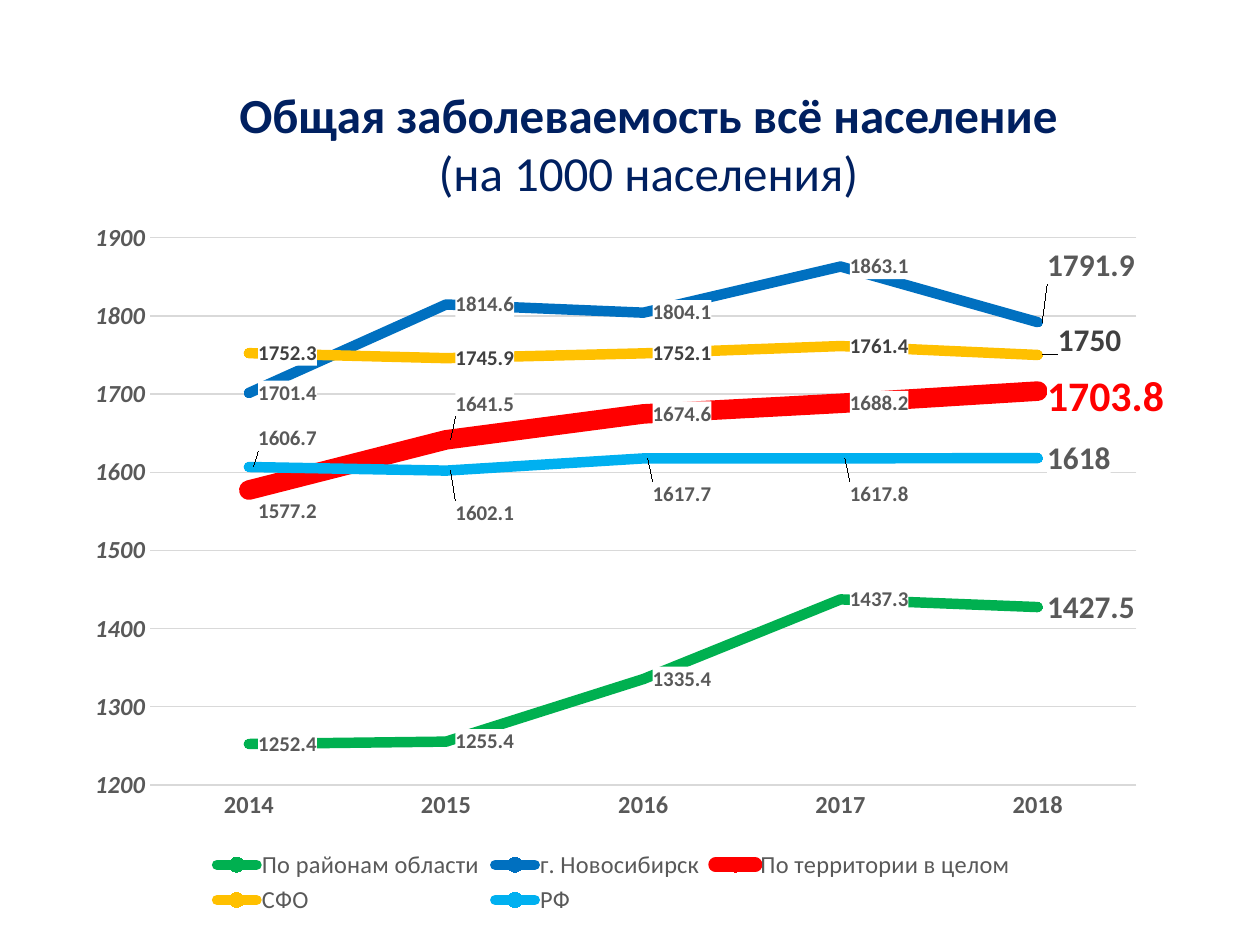
from lxml import etree
from pptx import Presentation
from pptx.chart.data import CategoryChartData
from pptx.dml.color import RGBColor
from pptx.enum.chart import (XL_CHART_TYPE, XL_LABEL_POSITION, XL_LEGEND_POSITION,
                             XL_MARKER_STYLE, XL_TICK_MARK)
from pptx.enum.text import MSO_AUTO_SIZE, PP_ALIGN
from pptx.oxml import parse_xml
from pptx.oxml.ns import nsdecls, qn
from pptx.util import Cm, Pt

LINE_MARKERS = XL_CHART_TYPE.LINE_MARKERS
RIGHT = XL_LABEL_POSITION.RIGHT
BOTTOM = XL_LEGEND_POSITION.BOTTOM
CIRCLE = XL_MARKER_STYLE.CIRCLE
NO_TICK = XL_TICK_MARK.NONE
CENTER = PP_ALIGN.CENTER
FIT_SHAPE = MSO_AUTO_SIZE.SHAPE_TO_FIT_TEXT

FONT = "Calibri"
NAVY = RGBColor(0x00, 0x20, 0x60)
GREY = RGBColor(0x59, 0x59, 0x59)
DARK_GREY = RGBColor(0x40, 0x40, 0x40)
LIGHT_GREY = RGBColor(0xD9, 0xD9, 0xD9)
BLACK = RGBColor(0x00, 0x00, 0x00)
GREEN = RGBColor(0x00, 0xB0, 0x50)
BLUE = RGBColor(0x00, 0x70, 0xC0)
RED = RGBColor(0xFF, 0x00, 0x00)
AMBER = RGBColor(0xFF, 0xC0, 0x00)
SKY = RGBColor(0x00, 0xB0, 0xF0)
MARKER_BLUE = RGBColor(0x5B, 0x9B, 0xD5)
MARKER_ORANGE = RGBColor(0xED, 0x7D, 0x31)
MARKER_GREY = RGBColor(0xA5, 0xA5, 0xA5)
MARKER_INDIGO = RGBColor(0x44, 0x72, 0xC4)

YEARS = ["2014", "2015", "2016", "2017", "2018"]
LAST = len(YEARS) - 1
# Name, values, line colour, line width, marker colour, label colour,
# last label (size, colour), label shifts {point: (x, y)} as shares of the chart
SERIES = [
    ("По районам области", (1252.4, 1255.4, 1335.4, 1437.3, 1427.5),
     GREEN, 6, MARKER_BLUE, GREY, (18, GREY), {}),
    ("г. Новосибирск", (1701.4, 1814.6, 1804.1, 1863.1, 1791.9),
     BLUE, 6, MARKER_ORANGE, GREY, (18, GREY), {LAST: (0, -0.08)}),
    ("По территории в целом ", (1577.2, 1641.5, 1674.6, 1688.2, 1703.8),
     RED, 11.25, MARKER_GREY, GREY, (24, RED),
     {0: (0, 0.03), 1: (0, -0.05), LAST: (0, 0.01)}),
    ("СФО", (1752.3, 1745.9, 1752.1, 1761.4, 1750),
     AMBER, 6, AMBER, DARK_GREY, (18, DARK_GREY), {LAST: (0.01, -0.02)}),
    ("РФ", (1606.7, 1602.1, 1617.7, 1617.8, 1618),
     SKY, 6, MARKER_INDIGO, GREY, (18, GREY),
     {0: (0, -0.04), 1: (0, 0.06), 2: (0, 0.05), 3: (0, 0.05)}),
]


def set_font(font, size, color, bold=False):
    font.name = FONT
    font.size = Pt(size)
    font.bold = bold
    font.color.rgb = color


def manual_layout(**settings):
    layout = parse_xml(f"<c:layout {nsdecls('c')}><c:manualLayout/></c:layout>")
    for name, value in settings.items():
        etree.SubElement(layout[0], qn(f"c:{name}")).set("val", str(value))
    return layout


def fill_white(labels_element):
    """Put a white background behind data labels whose font is already set."""
    labels_element.find(qn("c:txPr")).addprevious(parse_xml(
        f"<c:spPr {nsdecls('c', 'a')}><a:solidFill><a:srgbClr val='FFFFFF'/>"
        "</a:solidFill><a:ln><a:noFill/></a:ln></c:spPr>"))


def style_line(series, color, width, marker_color):
    series.smooth = False
    series.format.line.color.rgb = color
    series.format.line.width = Pt(width)
    line = series._element.find(qn("c:spPr")).find(qn("a:ln"))
    line.set("cap", "rnd")
    etree.SubElement(line, qn("a:round"))
    series.marker.style = CIRCLE
    series.marker.size = 5
    series.marker.format.fill.solid()
    series.marker.format.fill.fore_color.rgb = marker_color
    series.marker.format.line.color.rgb = color


def style_labels(series, color, last_style, shifts):
    labels = series.data_labels
    labels.show_value = True
    labels.position = RIGHT
    set_font(labels.font, 12, color, True)
    fill_white(labels._element)
    for index in sorted({LAST, *shifts}):
        label = series.points[index].data_label
        size, label_color = last_style if index == LAST else (12, color)
        set_font(label.font, size, label_color, True)
        label.position = RIGHT
        element = next(item for item in labels._element.findall(qn("c:dLbl"))
                       if item.find(qn("c:idx")).get("val") == str(index))
        fill_white(element)
        if index in shifts:
            x, y = shifts[index]
            element.find(qn("c:idx")).addnext(manual_layout(x=x, y=y))


def style_axes(chart):
    for axis in (chart.category_axis, chart.value_axis):
        axis.major_tick_mark = axis.minor_tick_mark = NO_TICK
        set_font(axis.tick_labels.font, 14, GREY, True)
    axis_line = chart.category_axis.format.line
    axis_line.color.rgb = LIGHT_GREY
    axis_line.width = Pt(0.75)

    value_axis = chart.value_axis
    value_axis.tick_labels.font.italic = True
    value_axis.minimum_scale, value_axis.maximum_scale = 1200, 1900
    value_axis.major_unit = 100
    value_axis.format.line.fill.background()
    gridline = value_axis.major_gridlines.format.line
    gridline.color.rgb = LIGHT_GREY
    gridline.width = Pt(0.75)


def add_morbidity_chart(slide, left, top, width, height):
    data = CategoryChartData()
    data.categories = YEARS
    for name, values, *_ in SERIES:
        data.add_series(name, values)
    chart = slide.shapes.add_chart(LINE_MARKERS, left, top, width, height, data).chart
    set_font(chart.font, 10, BLACK)
    chart.has_title = False
    chart.has_legend = True
    chart.legend.position = BOTTOM
    chart.legend.include_in_layout = False
    set_font(chart.legend.font, 14, GREY)
    style_axes(chart)

    plot = chart.plots[0]
    plot.vary_by_categories = False
    for series, row in zip(plot.series, SERIES):
        color, width_points, marker_color, label_color, last_style, shifts = row[2:]
        style_line(series, color, width_points, marker_color)
        style_labels(series, label_color, last_style, shifts)

    plot_area = plot._element.getparent()
    for layout in plot_area.findall(qn("c:layout")):
        plot_area.remove(layout)
    plot_area.insert(0, manual_layout(layoutTarget="inner", xMode="edge", yMode="edge",
                                      x=0.07, y=0.04, w=0.91, h=0.77))


def add_title(slide, left, top, width, height):
    frame = slide.shapes.add_textbox(left, top, width, height).text_frame
    frame.word_wrap = True
    frame.auto_size = FIT_SHAPE
    paragraph = frame.paragraphs[0]
    paragraph.alignment = CENTER
    paragraph.font.name = FONT
    paragraph.font.size = Pt(28)
    paragraph.font.color.rgb = NAVY
    for text, bold in (("Общая заболеваемость всё население ", True),
                       ("(на 1000 населения)", False)):
        run = paragraph.add_run()
        run.text = text
        run.font.bold = bold


def main():
    presentation = Presentation()
    presentation.slide_width, presentation.slide_height = Cm(25.4), Cm(19.05)
    slide = presentation.slides.add_slide(presentation.slide_layouts[6])
    add_morbidity_chart(slide, Cm(1.5), Cm(4.22), Cm(21.97), Cm(14.33))
    add_title(slide, Cm(4.27), Cm(1.57), Cm(17.6), Cm(2.64))
    presentation.save("out.pptx")


if __name__ == "__main__":
    main()
